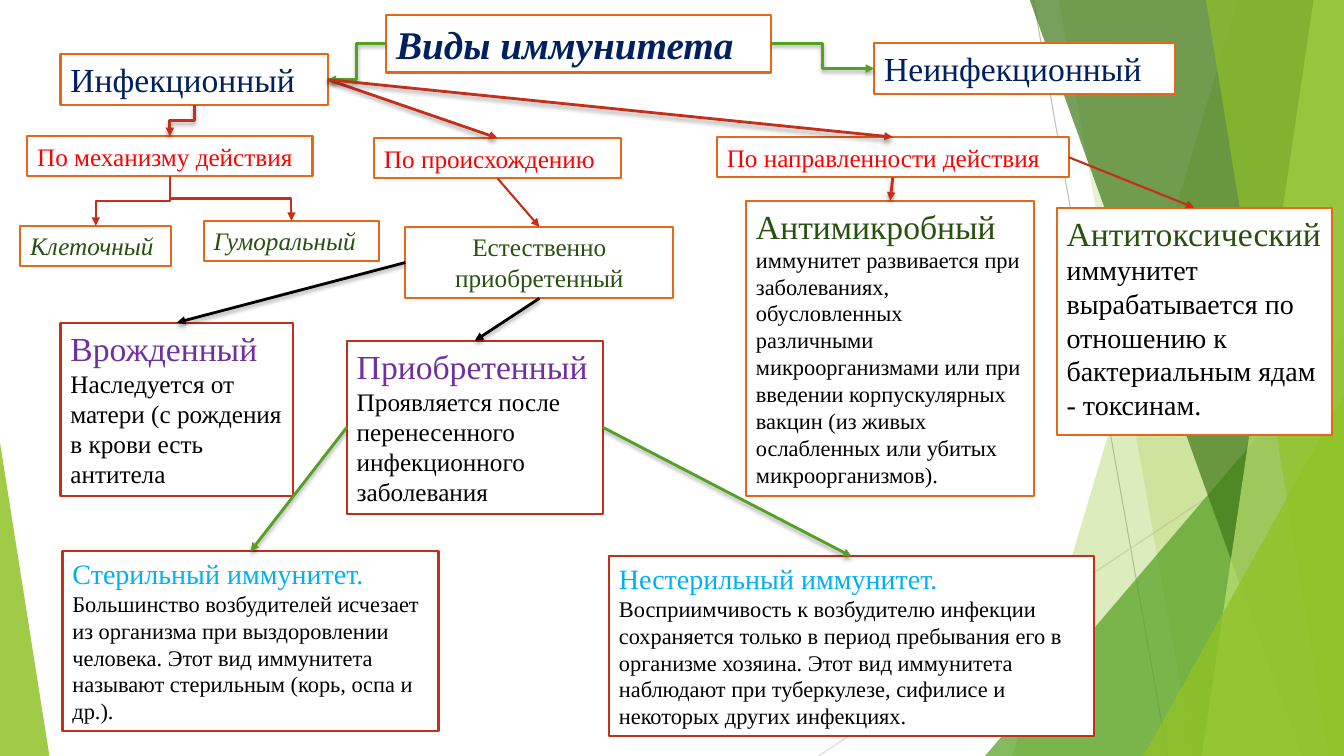
import lxml.etree
import pptx
import pptx.dml.color
import pptx.enum.dml
import pptx.enum.shapes
import pptx.enum.text
import pptx.oxml
import pptx.oxml.ns
import pptx.util

Inches = pptx.util.Inches
Pt = pptx.util.Pt
RGBColor = pptx.dml.color.RGBColor
qn = pptx.oxml.ns.qn
SHAPES = pptx.enum.shapes.MSO_SHAPE
CONNECTORS = pptx.enum.shapes.MSO_CONNECTOR

FONT = "Times New Roman"
WHITE = RGBColor(0xFF, 0xFF, 0xFF)
BLACK = RGBColor(0, 0, 0)
NAVY = RGBColor(0x00, 0x20, 0x60)
RED = RGBColor(0xFF, 0x00, 0x00)
PURPLE = RGBColor(0x70, 0x30, 0xA0)
SKY = RGBColor(0x00, 0xB0, 0xF0)
ORANGE = RGBColor(0xE7, 0x66, 0x18)
BRICK = RGBColor(0xC4, 0x2F, 0x1A)
GREEN = RGBColor(0x54, 0xA0, 0x21)
LIME = RGBColor(0x90, 0xC2, 0x26)
PALE_LIME = RGBColor(0xC0, 0xE4, 0x74)
FOREST = RGBColor(0x3F, 0x78, 0x19)
DARK_GREEN = RGBColor(0x2A, 0x50, 0x10)
GRAY = RGBColor(0xBF, 0xBF, 0xBF)
LIGHT_GRAY = RGBColor(0xD9, 0xD9, 0xD9)

TOP, LEFT, BOTTOM, RIGHT = range(4)
PAGE_WIDTH, PAGE_HEIGHT = 13.33, 7.5


def paint(shape, color, opacity):
    shape.shadow.inherit = False
    shape.fill.solid()
    shape.fill.fore_color.rgb = color
    shape.line.fill.background()
    tint = shape.fill._xPr.find(qn("a:solidFill"))[0]
    lxml.etree.SubElement(tint, qn("a:alpha")).set("val", str(opacity * 1000))


def add_band(page, top_left, bottom_left, color, opacity):
    corners = [(PAGE_WIDTH, -0.01), (PAGE_WIDTH, PAGE_HEIGHT), (bottom_left, PAGE_HEIGHT)]
    outline = page.shapes.build_freeform(Inches(top_left), Inches(-0.01))
    outline.add_line_segments([(Inches(x), Inches(y)) for x, y in corners])
    paint(outline.convert_to_shape(), color, opacity)


def add_triangle(page, left, top, width, apex, color, opacity):
    triangle = page.shapes.add_shape(
        SHAPES.ISOSCELES_TRIANGLE, Inches(left), Inches(top),
        Inches(width), Inches(PAGE_HEIGHT - top))
    triangle.adjustments[0] = apex
    paint(triangle, color, opacity)


def add_line(page, kind, start, end, color, weight, shadow=False):
    line = page.shapes.add_connector(kind, *map(Inches, start + end))
    line.line.color.rgb = color
    line.line.width = Pt(weight)
    effects = lxml.etree.SubElement(line.element.spPr, qn("a:effectLst"))
    if shadow:
        effects.append(pptx.oxml.parse_xml(
            '<a:outerShdw xmlns:a="http://schemas.openxmlformats.org/drawingml/2006/main" '
            'blurRad="38100" dist="25400" dir="5400000" rotWithShape="0">'
            '<a:srgbClr val="000000"><a:alpha val="35000"/></a:srgbClr></a:outerShdw>'))
    return line


def turn_downward(line):
    x1, y1, x2, y2 = line.begin_x, line.begin_y, line.end_x, line.end_y
    across, down = abs(x2 - x1), abs(y2 - y1)
    line.left = (x1 + x2 - down) // 2
    line.top = (y1 + y2 - across) // 2
    line.width, line.height = down, across
    frame = line.element.spPr.xfrm
    frame.set("rot", "16200000" if x2 > x1 else "5400000")
    frame.set("flipH", "1" if x2 > x1 else "0")
    frame.set("flipV", "0")


def add_arrow(page, source, source_side, target, target_side, color, bold=True, bent=False):
    kind = CONNECTORS.ELBOW if bent else CONNECTORS.STRAIGHT
    arrow = add_line(page, kind, (0, 0), (1, 1), color, 2 if bold else 1.5, bold)
    arrow.begin_connect(source, source_side)
    arrow.end_connect(target, target_side)
    if bent and source_side == BOTTOM:
        turn_downward(arrow)
    head = lxml.etree.SubElement(arrow.line._get_or_add_ln(), qn("a:tailEnd"))
    head.set("type", "triangle")


def add_box(page, place, border, paragraphs, bold=False, italic=False, align=None):
    box = page.shapes.add_textbox(*map(Inches, place))
    box.fill.solid()
    box.fill.fore_color.rgb = WHITE
    box.line.color.rgb = border
    box.line.width = Pt(1.5)
    frame = box.text_frame
    frame.word_wrap = True
    for index, spans in enumerate(paragraphs):
        para = frame.add_paragraph() if index else frame.paragraphs[0]
        para.alignment = align
        for text, size, color in spans:
            span = para.add_run()
            span.text = text
            span.font.name = FONT
            span.font.size = Pt(size)
            span.font.color.rgb = color
            span.font.bold = bold
            span.font.italic = italic
    return box


def add_label(page, place, text, size, color, **style):
    return add_box(page, place, ORANGE, [[(text, size, color)]], **style)


def add_card(page, place, heading, heading_size, color, body, body_size):
    return add_box(page, place, BRICK,
                   [[(heading, heading_size, color)], [(body, body_size, BLACK)]])


def add_backdrop(page):
    add_line(page, CONNECTORS.STRAIGHT, (10.25, 0), (11.58, 7.5), GRAY, 0.75)
    add_line(page, CONNECTORS.STRAIGHT, (13.33, 4.03), (8.12, 7.5), LIGHT_GRAY, 0.75)
    add_band(page, 12.28, 10.04, LIME, 30)
    add_band(page, 10.5, 11.83, LIME, 20)
    add_triangle(page, 9.77, 3.33, 3.56, 1, GREEN, 72)
    add_band(page, 10.21, 12.91, FOREST, 70)
    add_band(page, 13.03, 11.92, PALE_LIME, 70)
    add_band(page, 11.96, 13.18, LIME, 65)
    add_triangle(page, 11.34, 3.93, 1.99, 1, LIME, 80)
    add_triangle(page, 0, 4.39, 0.49, 0, LIME, 85)


def add_scheme(page):
    title = add_label(page, (3.83, 0.15, 3.82, 0.57), "Виды иммунитета", 28, NAVY,
                      bold=True, italic=True)
    infectious = add_label(page, (0.6, 0.54, 2.65, 0.5), "Инфекционный", 24, NAVY)
    other = add_label(page, (8.67, 0.43, 2.98, 0.5), "Неинфекционный", 24, NAVY)
    mechanism = add_label(page, (0.27, 1.35, 2.83, 0.4), "По механизму действия", 18, RED)
    origin = add_label(page, (3.71, 1.37, 2.45, 0.4), "По происхождению", 18, RED)
    direction = add_label(page, (7.11, 1.36, 3.49, 0.4), "По направленности действия", 18, RED)
    cellular = add_label(page, (0.2, 2.24, 1.5, 0.4), "Клеточный", 18, DARK_GREEN, italic=True)
    humoral = add_label(page, (2.02, 2.19, 1.74, 0.4), "Гуморальный", 18, DARK_GREEN, italic=True)
    antimicrobial = add_box(page, (7.4, 1.99, 2.86, 2.93), ORANGE, [[
        ("Антимикробный ", 24, DARK_GREEN),
        ("иммунитет развивается при заболеваниях, обусловленных различными "
         "микроорганизмами или при введении корпускулярных вакцин (из живых "
         "ослабленных или убитых микроорганизмов).", 16, BLACK)]])
    antitoxic = add_box(page, (10.48, 2.06, 2.73, 2.26), ORANGE, [[
        ("Антитоксический", 24, DARK_GREEN),
        (" ", 20, DARK_GREEN),
        ("иммунитет вырабатывается по отношению к бактериальным ядам - токсинам.",
         20, BLACK)]])
    natural = add_label(page, (4.02, 2.25, 2.66, 0.71), "Естественно приобретенный", 18,
                        DARK_GREEN, align=pptx.enum.text.PP_ALIGN.CENTER)
    acquired = add_card(page, (3.44, 3.38, 2.54, 1.72), "Приобретенный", 24, PURPLE,
                        "Проявляется после перенесенного инфекционного заболевания", 18)
    innate = add_card(page, (0.6, 3.2, 2.31, 1.72), "Врожденный", 24, PURPLE,
                      "Наследуется от матери (с рождения в крови есть антитела", 18)
    sterile = add_card(
        page, (0.62, 5.47, 3.73, 1.78), "Стерильный иммунитет.", 20, SKY,
        "Большинство возбудителей исчезает из организма при выздоровлении человека. "
        "Этот вид иммунитета называют стерильным (корь, оспа и др.).", 16)
    nonsterile = add_card(
        page, (6.04, 5.52, 4.81, 1.78), "Нестерильный иммунитет.", 20, SKY,
        "Восприимчивость к возбудителю инфекции сохраняется только в период пребывания "
        "его в организме хозяина. Этот вид иммунитета наблюдают при туберкулезе, "
        "сифилисе и некоторых других инфекциях.", 16)

    add_arrow(page, title, LEFT, infectious, RIGHT, GREEN, bent=True)
    add_arrow(page, title, RIGHT, other, LEFT, GREEN, bent=True)
    add_arrow(page, infectious, BOTTOM, mechanism, TOP, BRICK, bent=True)
    for basis in (origin, direction):
        add_arrow(page, infectious, RIGHT, basis, TOP, BRICK)
    for kind in (cellular, humoral):
        add_arrow(page, mechanism, BOTTOM, kind, TOP, BRICK, bold=False, bent=True)
    add_arrow(page, natural, LEFT, innate, TOP, BLACK)
    add_arrow(page, natural, BOTTOM, acquired, TOP, BLACK)
    add_arrow(page, origin, BOTTOM, natural, TOP, BRICK, bold=False)
    add_arrow(page, direction, BOTTOM, antimicrobial, TOP, BRICK)
    add_arrow(page, direction, RIGHT, antitoxic, TOP, BRICK, bold=False)
    add_arrow(page, acquired, LEFT, sterile, TOP, GREEN)
    add_arrow(page, acquired, RIGHT, nonsterile, TOP, GREEN)


def main():
    deck = pptx.Presentation()
    deck.slide_width = Inches(PAGE_WIDTH)
    deck.slide_height = Inches(PAGE_HEIGHT)
    page = deck.slides.add_slide(deck.slide_layouts[6])
    add_backdrop(page)
    add_scheme(page)
    deck.save("out.pptx")


if __name__ == "__main__":
    main()
